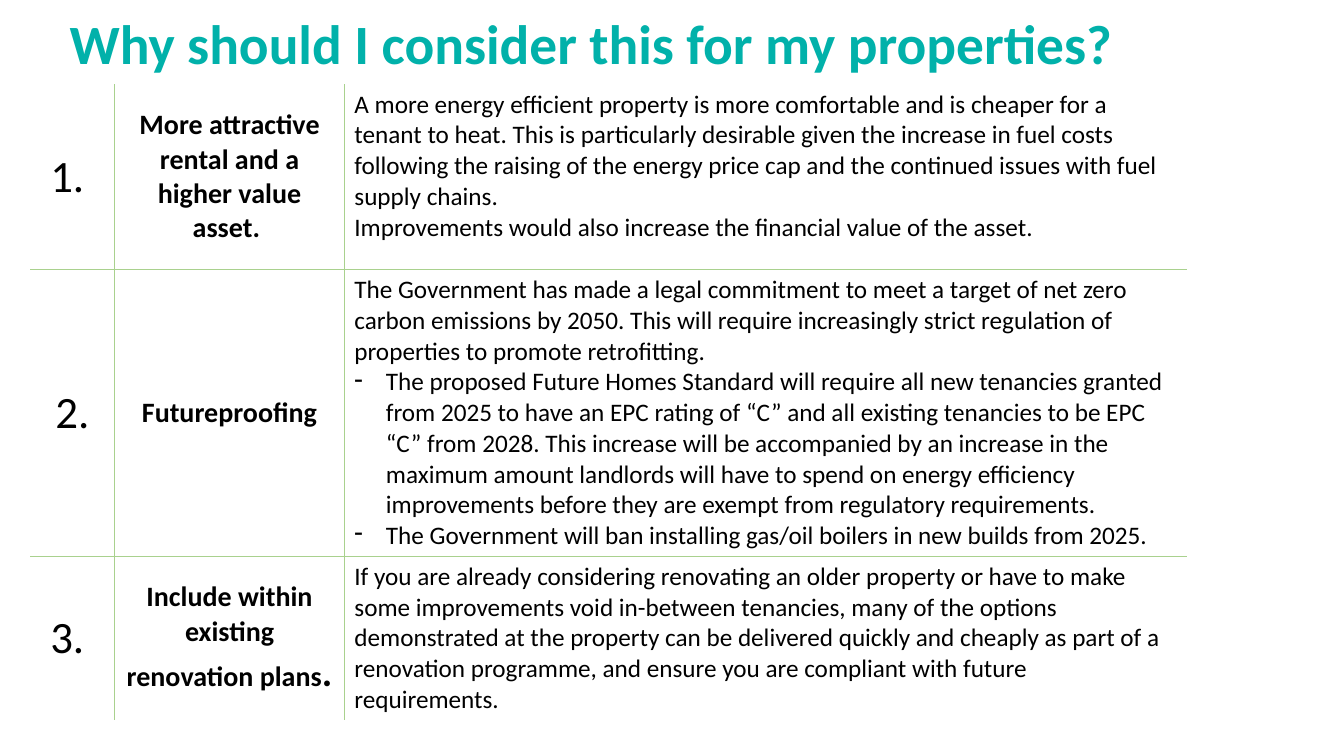
from dataclasses import dataclass

from lxml import etree
from pptx import Presentation
from pptx.dml.color import RGBColor
from pptx.enum.text import MSO_ANCHOR, MSO_AUTO_SIZE, PP_ALIGN
from pptx.oxml.ns import qn
from pptx.util import Pt

LEFT, CENTER = PP_ALIGN.LEFT, PP_ALIGN.CENTER
TOP, MIDDLE = MSO_ANCHOR.TOP, MSO_ANCHOR.MIDDLE
NO_FIT = MSO_AUTO_SIZE.NONE
TITLE_ONLY = 5


@dataclass(frozen=True)
class Theme:
    """Colours, font and type sizes of the deck."""
    font: str = "Calibri"
    teal: str = "01B1AA"
    rule: str = "A9D18E"
    text: str = "000000"
    paper: str = "FFFFFF"
    title_size: float = 39.6
    number_size: float = 32
    heading_size: float = 20
    stop_size: float = 28
    body_size: float = 18


THEME = Theme()
TITLE = "Why should I consider this for my properties?"
TITLE_BOX = (42.5, 21, 775.5, 25)
TABLE_BOX = (21.5, 60, 826.5, 408)
COLUMN_WIDTHS = (60.5, 164, 602)
ROW_HEIGHTS = (132.5, 186.5, 89)
BULLET_INDENT = 22.5
REASONS = (
    ("1. ", (("More attractive rental and a higher value asset. ", THEME.heading_size),), (
        ("A more energy efficient property is more comfortable and is cheaper for a tenant to heat. "
         "This is particularly desirable given the increase in fuel costs following the raising of "
         "the energy price cap and the continued issues with fuel supply chains.", False),
        ("Improvements would also increase the financial value of the asset.", False),
    )),
    ("2.", (("Futureproofing", THEME.heading_size),), (
        ("The Government has made a legal commitment to meet a target of net zero carbon emissions "
         "by 2050. This will require increasingly strict regulation of properties to promote "
         "retrofitting.", False),
        ("The proposed Future Homes Standard will require all new tenancies granted from 2025 to "
         "have an EPC rating of “C” and all existing tenancies to be EPC “C” from 2028. This "
         "increase will be accompanied by an increase in the maximum amount landlords will have to "
         "spend on energy efficiency improvements before they are exempt from regulatory "
         "requirements.", True),
        ("The Government will ban installing gas/oil boilers in new builds from 2025.", True),
    )),
    ("3. ", (("Include within existing renovation plans", THEME.heading_size),
             (". ", THEME.stop_size)), (
        ("If you are already considering renovating an older property or have to make some "
         "improvements void in-between tenancies, many of the options demonstrated at the property "
         "can be delivered quickly and cheaply as part of a renovation programme, and ensure you "
         "are compliant with future requirements.", False),
    )),
)


def add_text(para, text, *, size, color=THEME.text, bold=False, align=LEFT):
    """Append a formatted span to a paragraph."""
    para.alignment = align
    span = para.add_run()
    span.text = text
    span.font.name = THEME.font
    span.font.size = Pt(size)
    span.font.bold = bold
    span.font.color.rgb = RGBColor.from_string(color)


def add_dash(para):
    """Give a paragraph a hanging dash bullet."""
    properties = para._p.get_or_add_pPr()
    properties.set("marL", str(Pt(BULLET_INDENT)))
    properties.set("indent", str(-Pt(BULLET_INDENT)))
    etree.SubElement(properties, qn("a:buChar"), char="-")


def set_borders(cell, visible):
    """Draw a rule on each visible edge and clear the other edges."""
    properties = cell._tc.get_or_add_tcPr()
    for index, (edge, shown) in enumerate(visible.items()):
        line = etree.Element(qn("a:ln" + edge), w=str(Pt(1)))
        if shown:
            fill = etree.SubElement(line, qn("a:solidFill"))
            etree.SubElement(fill, qn("a:srgbClr"), val=THEME.rule)
        else:
            etree.SubElement(line, qn("a:noFill"))
        properties.insert(index, line)


def place_title(page, box):
    """Fill the title placeholder and move it to the box."""
    title = page.shapes.title
    title.left, title.top, title.width, title.height = map(Pt, box)
    frame = title.text_frame
    frame.auto_size = NO_FIT
    frame.vertical_anchor = MIDDLE
    para = frame.paragraphs[0]
    para.line_spacing = 0.9
    add_text(para, TITLE, size=THEME.title_size, color=THEME.teal, bold=True)


def fill_row(cells, reason):
    """Write the number, heading and explanation of one reason."""
    number, heading, explanation = reason
    number_cell, heading_cell, body_cell = cells
    add_text(number_cell.text_frame.paragraphs[0], number, size=THEME.number_size, align=CENTER)
    for text, size in heading:
        add_text(heading_cell.text_frame.paragraphs[0], text, size=size, bold=True, align=CENTER)
    frame = body_cell.text_frame
    for index, (text, dashed) in enumerate(explanation):
        para = frame.add_paragraph() if index else frame.paragraphs[0]
        if dashed:
            add_dash(para)
        add_text(para, text, size=THEME.body_size)


def place_reasons(page, box):
    """Build the table of reasons in the box."""
    rows, columns = len(ROW_HEIGHTS), len(COLUMN_WIDTHS)
    table = page.shapes.add_table(rows, columns, *map(Pt, box)).table
    table.first_row = table.horz_banding = False
    for column, width in zip(table.columns, COLUMN_WIDTHS):
        column.width = Pt(width)
    for r, (row, height, reason) in enumerate(zip(table.rows, ROW_HEIGHTS, REASONS)):
        row.height = Pt(height)
        cells = list(row.cells)
        fill_row(cells, reason)
        for c, cell in enumerate(cells):
            cell.vertical_anchor = TOP if c == columns - 1 else MIDDLE
            cell.fill.solid()
            cell.fill.fore_color.rgb = RGBColor.from_string(THEME.paper)
            set_borders(cell, {"L": c > 0, "R": c < columns - 1, "T": r > 0, "B": r < rows - 1})


def main():
    """Build and save the deck."""
    deck = Presentation()
    deck.slide_width, deck.slide_height = Pt(960), Pt(540)
    page = deck.slides.add_slide(deck.slide_layouts[TITLE_ONLY])
    place_title(page, TITLE_BOX)
    place_reasons(page, TABLE_BOX)
    deck.save("out.pptx")


if __name__ == "__main__":
    main()
